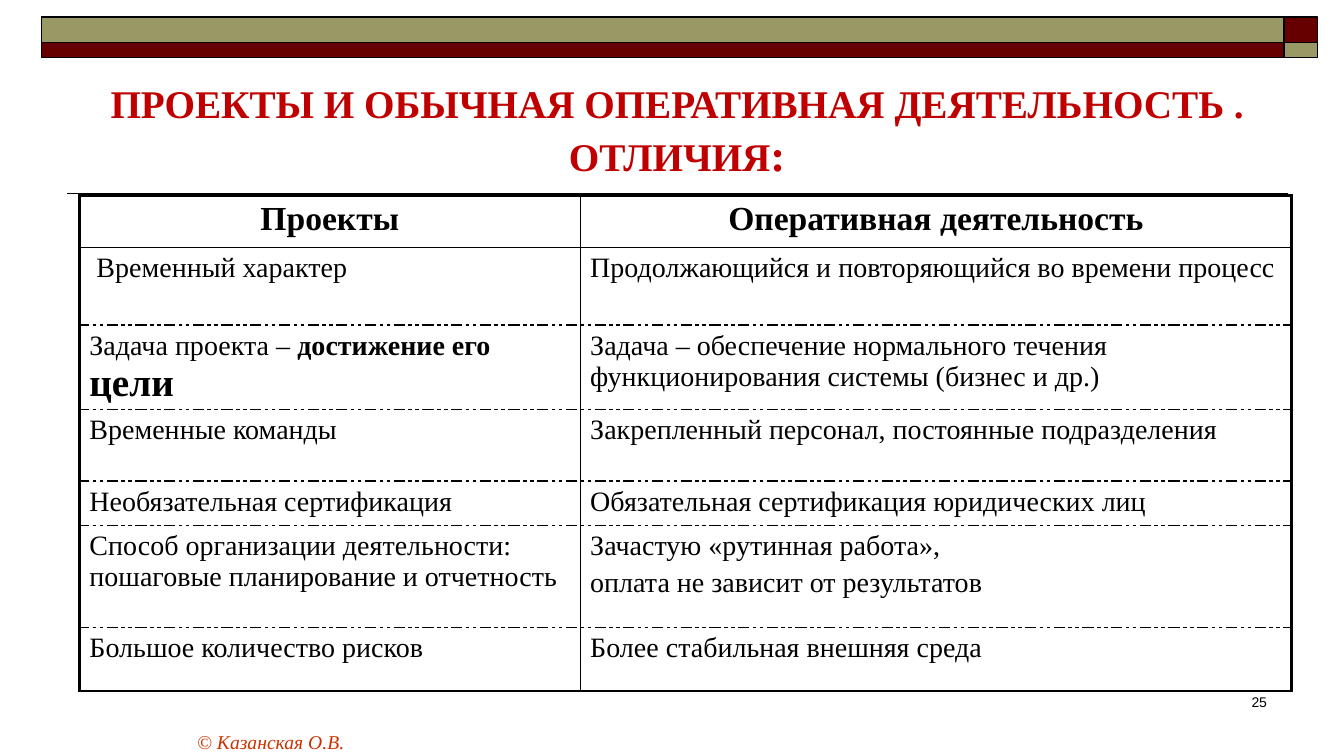
from typing import NamedTuple

import lxml.etree
import pptx
import pptx.dml.color
import pptx.enum.shapes
import pptx.enum.text
import pptx.oxml.ns
import pptx.util

Cm = pptx.util.Cm
Pt = pptx.util.Pt
Align = pptx.enum.text.PP_ALIGN
qn = pptx.oxml.ns.qn

BLACK, WINE, OLIVE, RED, RUST = "000000", "660000", "999966", "C00000", "CC3300"
SERIF = "Times New Roman"
THICK, THIN = 2.25, 1


class Bit(NamedTuple):
    text: str
    size: float = 20
    bold: bool = False
    color: str = BLACK
    font: str = SERIF
    slant: bool = False


class Bar(NamedTuple):
    left: float
    top: float
    width: float
    height: float
    fill: str


class Edge(NamedTuple):
    side: str
    width: float
    dash: str = "solid"


class Label(NamedTuple):
    left: float
    top: float
    width: float
    height: float
    bits: list[Bit]
    align: Align
    low: bool = False
    gap: float = 0


BARS = [
    Bar(left, top, width, height, fill)
    for top, height, fills in ((0.43, 0.64, (OLIVE, WINE)), (1.07, 0.38, (WINE, OLIVE)))
    for (left, width), fill in zip(((1.04, 31.32), (32.36, 0.84)), fills)
]

LABELS = [
    Label(1.42, 2.13, 31.29, 2.54,
          [Bit("ПРОЕКТЫ И ОБЫЧНАЯ ОПЕРАТИВНАЯ ДЕЯТЕЛЬНОСТЬ . ОТЛИЧИЯ", 28, True, RED),
           Bit(":", 32, True, RED)], Align.CENTER, low=True),
    Label(25.12, 17.35, 7.06, 1.27, [Bit("25", 10, font="Arial")], Align.RIGHT),
    Label(4.72, 18.26, 22.86, 0.79,
          [Bit("© Казанская О.В.", 14, color=RUST, slant=True)], Align.LEFT, gap=2.8),
]

COLS = [12.62, 17.93]
ROWS = [1.3, 1.96, 1.88, 1.8, 1.12, 2.57, 1.6]

# Each cell is a list of paragraphs, each paragraph a list of bits
CELLS = [
    [[[Bit("Проекты", 24, True)]], [[Bit("Оперативная деятельность", 24, True)]]],
    [[[Bit(" Временный характер")]],
     [[Bit("Продолжающийся и повторяющийся во времени процесс")]]],
    [[[Bit("Задача проекта – "), Bit("достижение его ", bold=True), Bit("цели", 28, True)]],
     [[Bit("Задача – обеспечение нормального течения функционирования системы "
           "(бизнес и др.)")]]],
    [[[Bit("Временные команды")]],
     [[Bit("Закрепленный персонал, постоянные подразделения")]]],
    [[[Bit("Необязательная сертификация")]],
     [[Bit("Обязательная сертификация юридических лиц")]]],
    [[[Bit("Способ организации деятельности: пошаговые планирование и отчетность")]],
     [[Bit("Зачастую «рутинная работа»,")], [Bit("оплата не зависит от результатов")]]],
    [[[Bit("Большое количество рисков")]], [[Bit("Более стабильная внешняя среда")]]],
]


def tint(code: str) -> pptx.dml.color.RGBColor:
    return pptx.dml.color.RGBColor.from_string(code)


def write(para, bits: list[Bit], align: Align, gap: float) -> None:
    para.alignment = align
    para.space_before = Pt(gap)
    for bit in bits:
        run = para.add_run()
        run.text = bit.text
        run.font.name = bit.font
        run.font.size = Pt(bit.size)
        run.font.bold = bit.bold
        run.font.italic = bit.slant
        run.font.color.rgb = tint(bit.color)


def draw_bar(slide, bar: Bar) -> None:
    shape = slide.shapes.add_shape(
        pptx.enum.shapes.MSO_SHAPE.RECTANGLE,
        Cm(bar.left), Cm(bar.top), Cm(bar.width), Cm(bar.height))
    shape.shadow.inherit = False
    shape.fill.solid()
    shape.fill.fore_color.rgb = tint(bar.fill)
    shape.line.color.rgb = tint(BLACK)
    shape.line.width = Pt(THIN)


def draw_rule(slide) -> None:
    rule = slide.shapes.add_connector(
        pptx.enum.shapes.MSO_CONNECTOR.STRAIGHT, Cm(1.7), Cm(4.88), Cm(32.46), Cm(4.88))
    rule.line.color.rgb = tint(BLACK)
    rule.line.width = Pt(THIN)
    lxml.etree.SubElement(rule.element.spPr, qn("a:effectLst"))


def draw_label(slide, label: Label) -> None:
    box = slide.shapes.add_textbox(
        Cm(label.left), Cm(label.top), Cm(label.width), Cm(label.height))
    frame = box.text_frame
    frame.word_wrap = True
    anchor = pptx.enum.text.MSO_ANCHOR
    frame.vertical_anchor = anchor.BOTTOM if label.low else anchor.TOP
    write(frame.paragraphs[0], label.bits, label.align, label.gap)


def edges(row: int, col: int) -> list[Edge]:
    """Thick frame, thin lines by the header and between columns, dashes between rows."""
    last = len(ROWS) - 1
    dash = "sysDashDotDot"
    tops = {0: Edge("T", THICK), 1: Edge("T", THIN)}
    feet = {0: Edge("B", THIN), last: Edge("B", THICK)}
    return [
        Edge("L", THIN if col else THICK),
        Edge("R", THICK if col else THIN),
        tops.get(row, Edge("T", THIN, dash)),
        feet.get(row, Edge("B", THIN, dash)),
    ]


def frame_cell(cell, sides: list[Edge]) -> None:
    props = cell._tc.get_or_add_tcPr()
    for spot, edge in enumerate(sides):
        line = lxml.etree.Element(qn(f"a:ln{edge.side}"), w=str(Pt(edge.width)))
        fill = lxml.etree.SubElement(line, qn("a:solidFill"))
        lxml.etree.SubElement(fill, qn("a:srgbClr"), val=BLACK)
        lxml.etree.SubElement(line, qn("a:prstDash"), val=edge.dash)
        props.insert(spot, line)


def draw_table(slide) -> None:
    table = slide.shapes.add_table(
        len(ROWS), len(COLS), Cm(2), Cm(4.93), Cm(sum(COLS)), Cm(sum(ROWS))).table
    table.first_row = table.horz_banding = False
    for col, width in zip(table.columns, COLS):
        col.width = Cm(width)
    for y, (height, texts) in enumerate(zip(ROWS, CELLS)):
        table.rows[y].height = Cm(height)
        for x, paras in enumerate(texts):
            cell = table.cell(y, x)
            cell.fill.background()
            frame_cell(cell, edges(y, x))
            frame = cell.text_frame
            for n, bits in enumerate(paras):
                para = frame.add_paragraph() if n else frame.paragraphs[0]
                write(para, bits, Align.LEFT if y else Align.CENTER, bits[0].size / 5)


def main() -> None:
    deck = pptx.Presentation()
    deck.slide_width, deck.slide_height = Cm(33.87), Cm(19.05)
    slide = deck.slides.add_slide(deck.slide_layouts[6])
    draw_rule(slide)
    for bar in BARS:
        draw_bar(slide, bar)
    draw_table(slide)
    for label in LABELS:
        draw_label(slide, label)
    deck.save("out.pptx")


if __name__ == "__main__":
    main()
